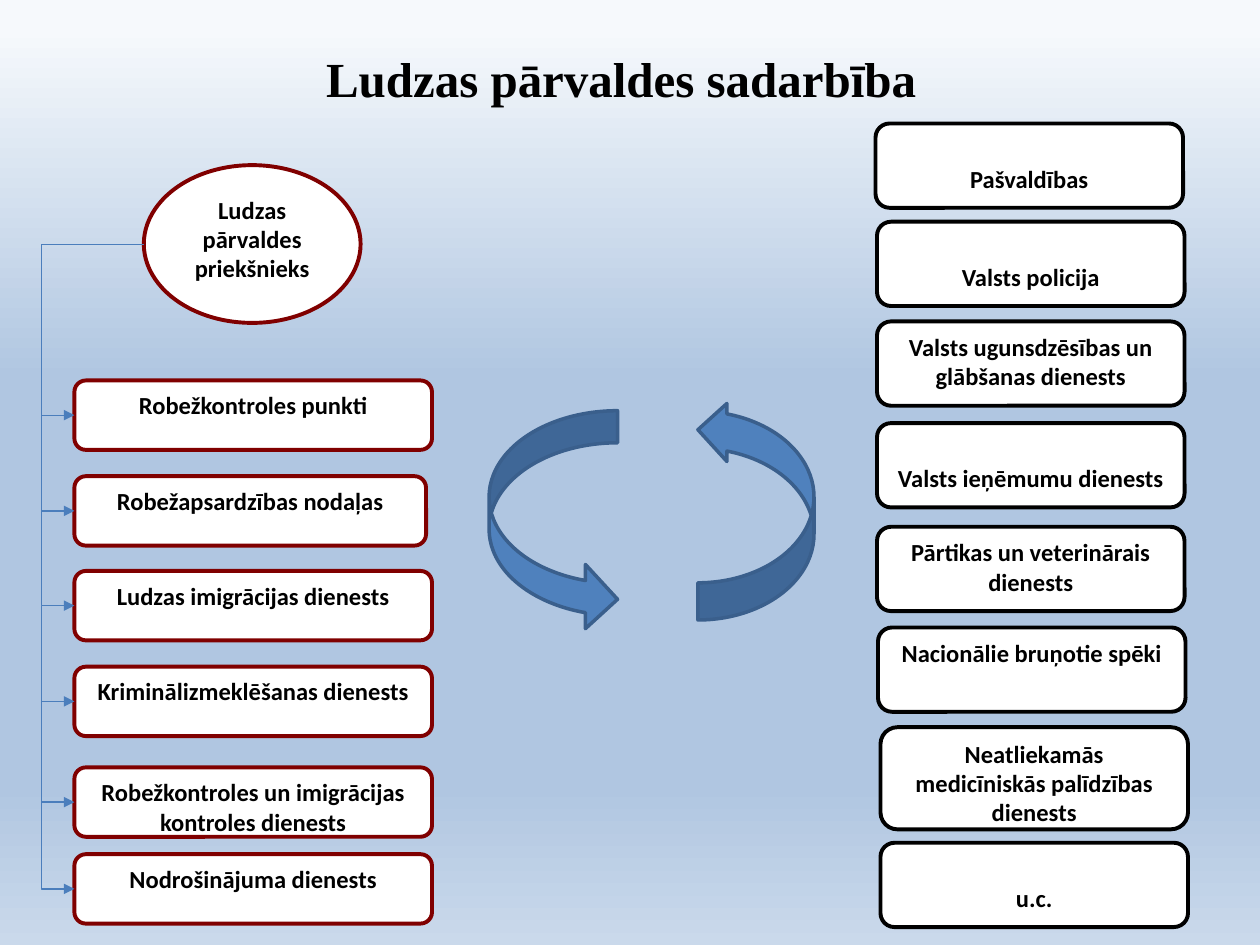
from itertools import pairwise

from lxml.etree import SubElement
from pptx import Presentation
from pptx.dml.color import RGBColor
from pptx.enum.shapes import MSO_CONNECTOR, MSO_SHAPE
from pptx.enum.text import MSO_ANCHOR, PP_ALIGN
from pptx.oxml.ns import qn
from pptx.util import Cm, Pt

BACKGROUND = [(3, "F6F9FC"), (40, "B0C6E1"), (83, "B0C6E1"), (100, "CAD9EB")]
UNITS = [
    ("Robežkontroles punkti", 4.34, 7.21),
    ("Robežapsardzības nodaļas", 6.27, 7.09),
    ("Ludzas imigrācijas dienests", 8.18, 7.21),
    ("Kriminālizmeklēšanas dienests", 10.11, 7.21),
    ("Robežkontroles un imigrācijas kontroles dienests", 12.14, 7.21),
    ("Nodrošinājuma dienests", 13.89, 7.21),
]
ONE_LINE_DOWN = 0.73
PARTNERS = [
    ("Pašvaldības", 0, 0, 1.7, ONE_LINE_DOWN),
    ("Valsts policija", 0.03, 1.98, 1.7, ONE_LINE_DOWN),
    ("Valsts ugunsdzēsības un glābšanas dienests", 0.03, 3.99, 1.7, 0.13),
    ("Valsts ieņēmumu dienests", 0.03, 6.04, 1.7, ONE_LINE_DOWN),
    ("Pārtikas un veterinārais dienests", 0.03, 8.13, 1.7, 0.13),
    ("Nacionālie bruņotie spēki", 0.05, 10.16, 1.7, 0.13),
    ("Neatliekamās medicīniskās palīdzības dienests", 0.1, 12.17, 2.06, 0.13),
    ("u.c.", 0.1, 14.5, 1.7, ONE_LINE_DOWN),
]


def color(value):
    return RGBColor.from_string(value)


def set_background(page):
    fill = page.background.fill
    fill.gradient()
    fill.gradient_angle = 270
    stops = next(page._element.iter(qn("a:gsLst")))
    for stop in list(stops):
        stops.remove(stop)
    for percent, value in BACKGROUND:
        stop = SubElement(stops, qn("a:gs"), pos=str(percent * 1000))
        SubElement(stop, qn("a:srgbClr"), val=value)


def write(shape, text, size, font):
    shape.text_frame.word_wrap = True
    para = shape.text_frame.paragraphs[0]
    para.text = text
    para.alignment = PP_ALIGN.CENTER
    para.font.size = Pt(size)
    para.font.name = font
    para.font.bold = True
    para.font.color.rgb = color("000000")


def add_shape(page, kind, left, top, width, height, fill, line, weight):
    shape = page.shapes.add_shape(kind, Cm(left), Cm(top), Cm(width), Cm(height))
    shape.shadow.inherit = False
    shape.fill.solid()
    shape.fill.fore_color.rgb = color(fill)
    shape.line.color.rgb = color(line)
    shape.line.width = Pt(weight)
    return shape


def add_label(page, kind, left, top, width, height, text, line, inset=0.13):
    box = add_shape(page, kind, left, top, width, height, "FFFFFF", line, 2.25)
    box.text_frame.vertical_anchor = MSO_ANCHOR.TOP
    box.text_frame.margin_top = Cm(inset)
    write(box, text, 14, "Calibri")


def add_arrow(page, kind, start, end):
    arrow = page.shapes.add_connector(kind, *map(Cm, start + end))
    arrow.line.color.rgb = color("4B7EBC")
    arrow.line.width = Pt(0.75)
    SubElement(arrow.line._get_or_add_ln(), qn("a:tailEnd"), type="triangle")
    SubElement(arrow._element.spPr, qn("a:effectLst"))
    return arrow


def add_side_bracket(page, start, end, trunk):
    arrow = add_arrow(page, MSO_CONNECTOR.ELBOW, start, end)
    bend = round((start[0] - trunk) / (start[0] - end[0]) * 100000)
    guides = next(arrow._element.iter(qn("a:avLst")))
    SubElement(guides, qn("a:gd"), name="adj1", fmla=f"val {bend}")


def add_down_right(page, start, end):
    middle_x, middle_y = (start[0] + end[0]) / 2, (start[1] + end[1]) / 2
    half_width, half_height = (end[1] - start[1]) / 2, (end[0] - start[0]) / 2
    arrow = add_arrow(
        page,
        MSO_CONNECTOR.ELBOW,
        (middle_x - half_width, middle_y - half_height),
        (middle_x + half_width, middle_y + half_height),
    )
    properties = arrow._element.spPr
    properties.find(qn("a:prstGeom")).set("prst", "bentConnector2")
    frame = properties.find(qn("a:xfrm"))
    frame.set("rot", "16200000")
    frame.set("flipH", "1")


def add_title(page, left, top, width, height):
    title = page.shapes.add_textbox(Cm(left), Cm(top), Cm(width), Cm(height))
    title.text_frame.vertical_anchor = MSO_ANCHOR.MIDDLE
    write(title, "Ludzas pārvaldes sadarbība", 28, "Times New Roman")


def add_department(page, left, top):
    red, height = "800000", 1.4
    edge = left + 0.66
    add_label(page, MSO_SHAPE.OVAL, left + 2.06, top, 4.37, 3.18,
              "Ludzas pārvaldes priekšnieks", red)
    for text, offset, width in UNITS:
        add_label(page, MSO_SHAPE.ROUNDED_RECTANGLE, edge, top + offset,
                  width, height, text, red)
    middles = [top + offset + height / 2 for _, offset, _ in UNITS]
    add_arrow(page, MSO_CONNECTOR.STRAIGHT, (left, middles[0]), (edge, middles[0]))
    add_side_bracket(page, (left + 2.06, top + 1.6), (edge, middles[1]), left)
    for upper, lower in pairwise(middles[1:]):
        add_down_right(page, (left, upper), (edge, lower))


def add_partners(page, left, top):
    for text, shift, offset, height, inset in PARTNERS:
        add_label(page, MSO_SHAPE.ROUNDED_RECTANGLE, left + shift, top + offset,
                  6.2, height, text, "000000", inset)


def add_cycle(page, left, top):
    blue, outline = "4F81BD", "3A5F8C"
    add_shape(page, MSO_SHAPE.CURVED_RIGHT_ARROW, left, top + 0.2, 2.59, 4.45,
              blue, outline, 2)
    upward = add_shape(page, MSO_SHAPE.CURVED_LEFT_ARROW, left + 4.21, top, 2.34, 4.42,
                       blue, outline, 2)
    for index, value in enumerate((0.32, 0.5, 0.25)):
        upward.adjustments[index] = value
    upward._element.spPr.find(qn("a:xfrm")).set("flipV", "1")


def main():
    deck = Presentation()
    deck.slide_width, deck.slide_height = Cm(25.4), Cm(19.05)
    page = deck.slides.add_slide(deck.slide_layouts[6])
    set_background(page)
    add_title(page, 1.09, 0.64, 22.86, 1.88)
    add_department(page, 0.84, 3.33)
    add_partners(page, 17.65, 2.49)
    add_cycle(page, 9.86, 8.08)
    deck.save("out.pptx")


if __name__ == "__main__":
    main()
